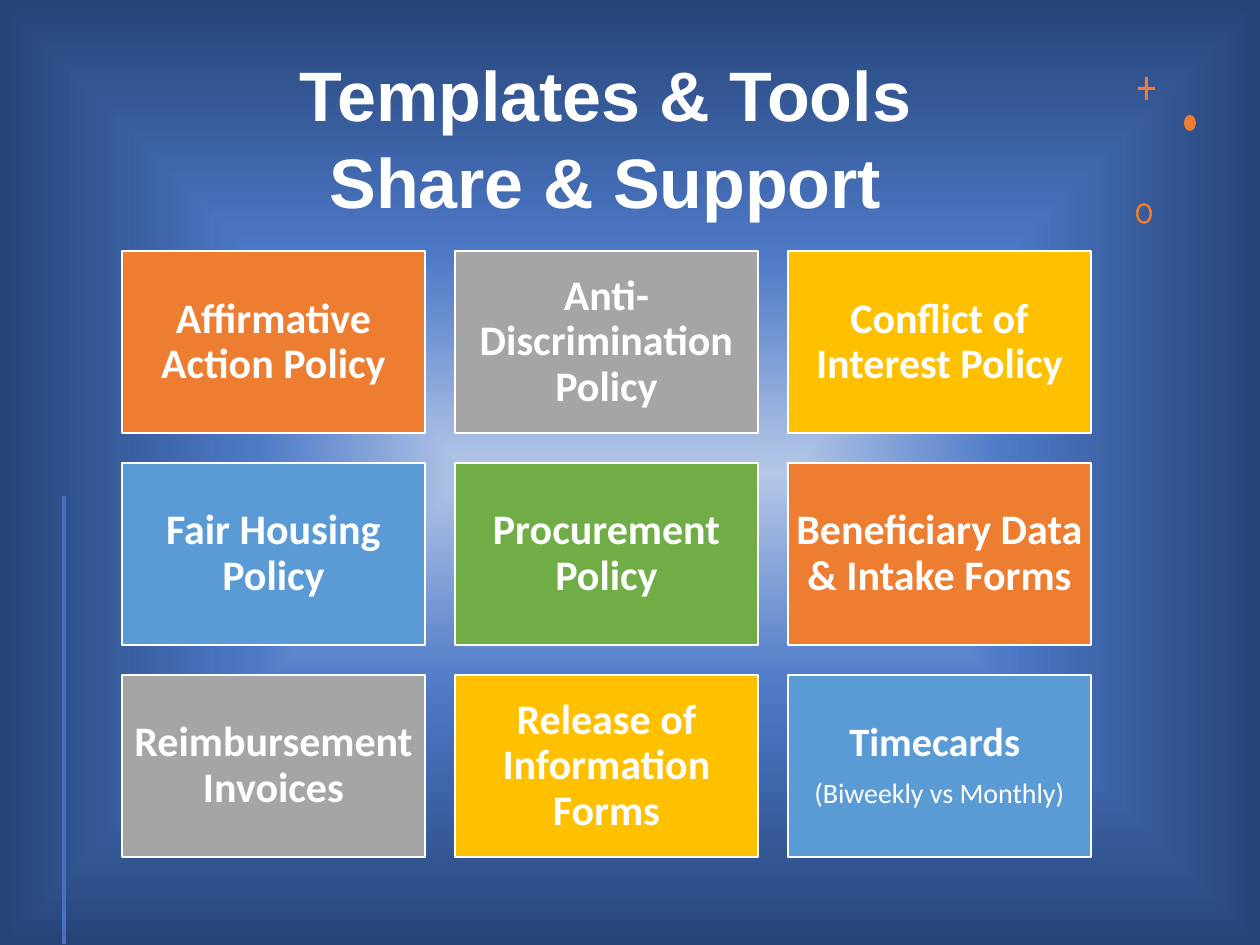
from dataclasses import dataclass

from pptx import Presentation
from pptx.dml.color import RGBColor
from pptx.enum.shapes import MSO_CONNECTOR, MSO_SHAPE
from pptx.enum.text import MSO_ANCHOR, MSO_AUTO_SIZE, PP_ALIGN
from pptx.oxml import parse_xml
from pptx.oxml.ns import nsdecls
from pptx.util import Pt

PX = 914400 // 126  # EMU in one px


@dataclass(frozen=True)
class Theme:
    white: str = "FFFFFF"
    orange: str = "ED7D31"
    gray: str = "A5A5A5"
    gold: str = "FFC000"
    blue: str = "5B9BD5"
    green: str = "70AD47"
    accent: str = "4472C4"
    glow: tuple = ((0, "B4C7E7"), (46, "4D79C7"), (100, "264478"))
    title_font: str = "Arial"
    body_font: str = "Calibri"
    title_size: int = 40
    tile_size: int = 24
    timecard_size: int = 23
    note_size: int = 16


T = Theme()


@dataclass(frozen=True)
class Tile:
    text: str
    color: str
    size: int = T.tile_size
    note: str = ""
    inset: int = 0


TILES = [
    Tile("Affirmative Action Policy", T.orange),
    Tile("Anti-Discrimination Policy", T.gray),
    Tile("Conflict of Interest Policy", T.gold),
    Tile("Fair Housing Policy", T.blue),
    Tile("Procurement Policy", T.green),
    Tile("Beneficiary Data & Intake Forms", T.orange),
    Tile("Reimbursement Invoices", T.gray, inset=6),
    Tile("Release of Information Forms", T.gold),
    Tile("Timecards ", T.blue, T.timecard_size, "(Biweekly vs Monthly)"),
]
COLS, LEFT, TOP, TILE_W, TILE_H, GAP = 3, 122, 251, 303, 182, 30


def px(*values: int) -> list[int]:
    return [v * PX for v in values]


def rgb(color: str) -> RGBColor:
    return RGBColor.from_string(color)


def paint(sp, color: str) -> None:
    sp.shadow.inherit = False
    sp.fill.solid()
    sp.fill.fore_color.rgb = rgb(color)
    sp.line.fill.background()


def set_frame(tf, inset: int = 0) -> None:
    tf.word_wrap = True
    tf.auto_size = MSO_AUTO_SIZE.NONE
    tf.vertical_anchor = MSO_ANCHOR.MIDDLE
    tf.margin_left = tf.margin_right = inset * PX
    tf.margin_top = tf.margin_bottom = 0


def style(p, font: str, size: int, bold: bool, spacing: float) -> None:
    p.alignment = PP_ALIGN.CENTER
    p.line_spacing = spacing
    for r in p.runs:
        r.font.name, r.font.size, r.font.bold = font, Pt(size), bold
        r.font.color.rgb = rgb(T.white)


def add_background(s) -> None:
    stops = "".join(f'<a:gs pos="{pos * 1000}"><a:srgbClr val="{color}"/></a:gs>'
                    for pos, color in T.glow)
    bg = parse_xml(
        f'<p:bg {nsdecls("p", "a")}><p:bgPr><a:gradFill><a:gsLst>{stops}</a:gsLst>'
        '<a:path path="shape"><a:fillToRect l="50000" t="50000" r="50000" b="50000"/>'
        '</a:path></a:gradFill><a:effectLst/></p:bgPr></p:bg>')
    s.element.cSld.insert(0, bg)


def add_title(s, text: str) -> None:
    sp = s.shapes.title
    sp.left, sp.top, sp.width, sp.height = px(122, 53, 967, 165)
    tf = sp.text_frame
    set_frame(tf)
    p = tf.paragraphs[0]
    p.text = text
    style(p, T.title_font, T.title_size, True, 1.04)


def add_plus(s, x: int, y: int, w: int, h: int, bar: int) -> None:
    x1, y1 = x + (w - bar) // 2, y + (h - bar) // 2
    x2, y2 = x1 + bar, y1 + bar
    right, bottom = x + w, y + h
    fb = s.shapes.build_freeform(x1, y, scale=PX)
    fb.add_line_segments([(x2, y), (x2, y1), (right, y1), (right, y2), (x2, y2),
                          (x2, bottom), (x1, bottom), (x1, y2), (x, y2), (x, y1),
                          (x1, y1)])
    paint(fb.convert_to_shape(), T.orange)


def add_ornaments(s) -> None:
    add_plus(s, 1138, 77, 17, 23, 3)
    paint(s.shapes.add_shape(MSO_SHAPE.OVAL, *px(1184, 115, 12, 16)), T.orange)
    ring = s.shapes.add_shape(MSO_SHAPE.DONUT, *px(1136, 203, 16, 21))
    ring.adjustments[0] = 0.15
    paint(ring, T.orange)


def add_side_line(s) -> None:
    line = s.shapes.add_connector(MSO_CONNECTOR.STRAIGHT, *px(64, 496, 64, 944))
    line.line.color.rgb = rgb(T.accent)
    line.line.width = Pt(2)
    line.element.spPr.append(parse_xml(f'<a:effectLst {nsdecls("a")}/>'))


def add_tile(s, tile: Tile, x: int, y: int) -> None:
    sp = s.shapes.add_shape(MSO_SHAPE.RECTANGLE, *px(x, y, TILE_W, TILE_H))
    paint(sp, tile.color)
    sp.line.color.rgb = rgb(T.white)
    sp.line.width = Pt(1)
    tf = sp.text_frame
    set_frame(tf, tile.inset)
    p = tf.paragraphs[0]
    p.text = tile.text
    style(p, T.body_font, tile.size, True, 0.9)
    if tile.note:
        p.space_after = Pt(8)
        p = tf.add_paragraph()
        p.text = tile.note
        style(p, T.body_font, T.note_size, False, 0.9)


def main() -> None:
    prs = Presentation()
    prs.slide_width, prs.slide_height = px(1260, 945)
    s = prs.slides.add_slide(prs.slide_layouts[5])

    # Backdrop and title
    add_background(s)
    add_title(s, "Templates & Tools\vShare & Support")

    # Decoration
    add_ornaments(s)
    add_side_line(s)

    # Grid of templates
    for i, tile in enumerate(TILES):
        row, col = divmod(i, COLS)
        add_tile(s, tile, LEFT + col * (TILE_W + GAP), TOP + row * (TILE_H + GAP))

    prs.save("out.pptx")


if __name__ == "__main__":
    main()
